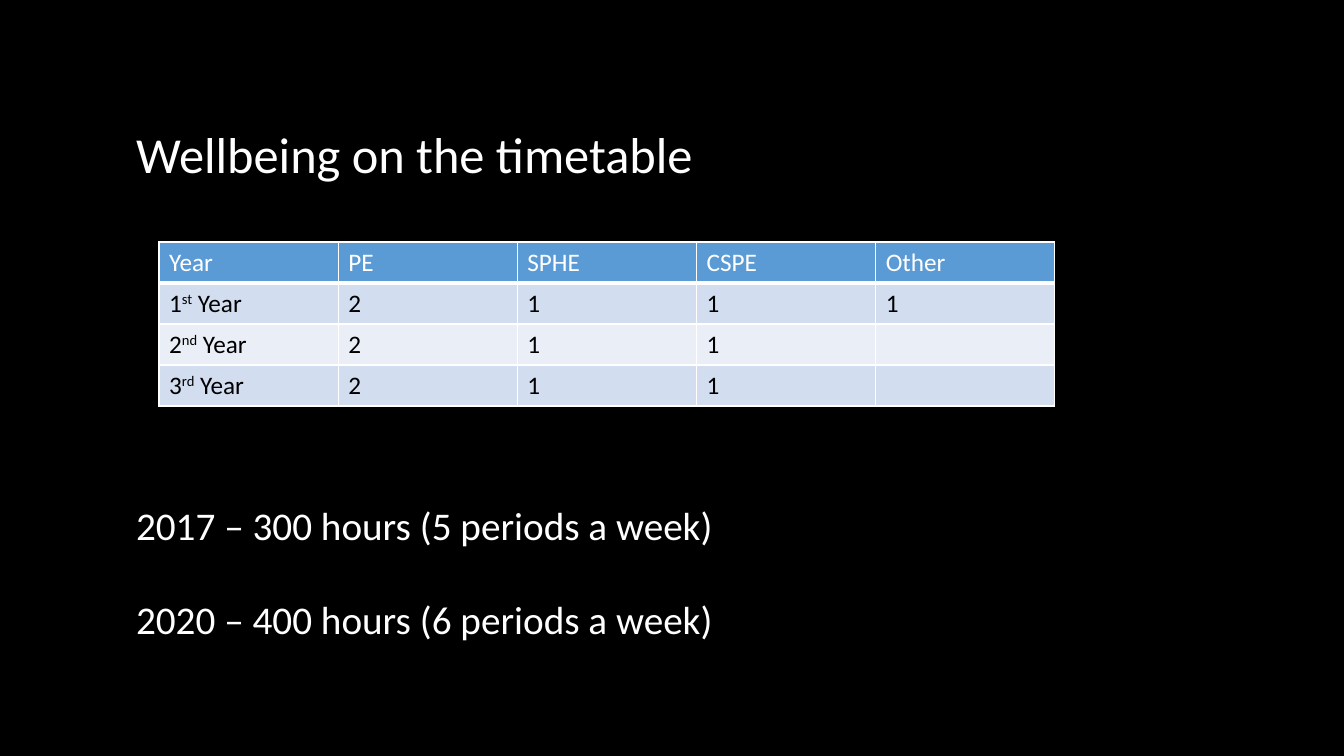
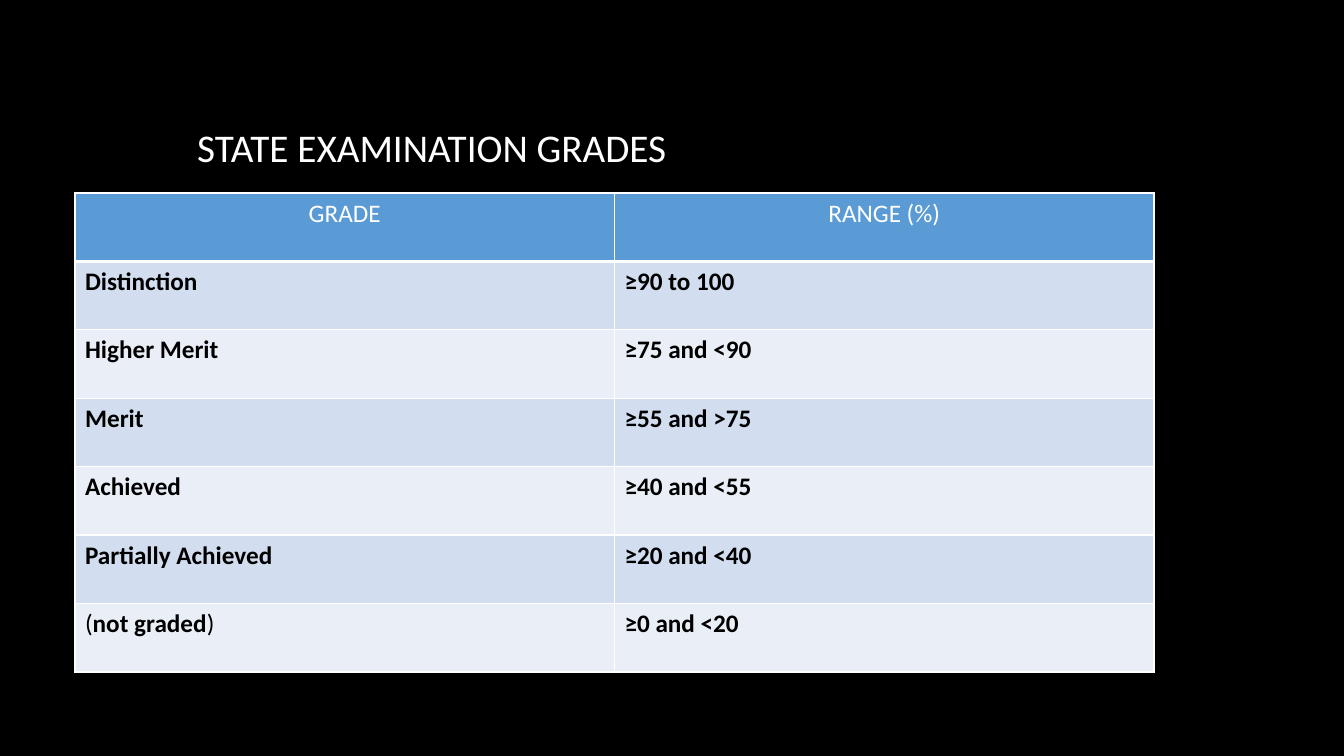
from dataclasses import dataclass

from pptx import Presentation
from pptx.dml.color import RGBColor
from pptx.enum.text import MSO_ANCHOR, MSO_AUTO_SIZE, PP_ALIGN
from pptx.oxml.ns import qn
from pptx.util import Emu, Pt
from lxml.etree import SubElement

EMU_PER_PX = 914400 / 100.8
TITLE_AND_BODY, TITLE_ONLY = 1, 5


@dataclass(frozen=True)
class Theme:
    """Colours, typeface and type sizes of the deck."""
    font: str = "Calibri"
    background: str = "000000"
    light: str = "FFFFFF"
    dark: str = "000000"
    header: str = "5B9BD5"
    bands: tuple = ("D2DEEF", "EAEFF7")
    title_size: int = 36
    text_size: int = 28
    table_size: int = 18
    paragraph_gap: int = 34
    rule: int = 1
    header_rule: int = 3


@dataclass(frozen=True)
class Span:
    """A piece of text with its own weight or raised position."""
    text: str
    bold: bool = False
    raised: bool = False


def px(length):
    """Turn pixels into EMU."""
    return Emu(round(length * EMU_PER_PX))


class Deck:
    """Holds the style and the current page, and draws each kind of element."""

    def __init__(self, theme):
        """Start an empty deck with the shared background."""
        self.theme = theme
        self.page = None
        self.presentation = Presentation()
        self.presentation.slide_width = px(1344)
        self.presentation.slide_height = px(756)
        self.fill(self.presentation.slide_master.background, theme.background)

    def fill(self, target, colour):
        """Give a background or a cell a solid colour."""
        target.fill.solid()
        target.fill.fore_color.rgb = RGBColor.from_string(colour)

    def add_page(self, layout):
        """Add a page and make it current."""
        layouts = self.presentation.slide_layouts
        self.page = self.presentation.slides.add_slide(layouts[layout])

    def add_spans(self, paragraph, spans, size, colour):
        """Add spans to a paragraph run by run."""
        for span in spans:
            run = paragraph.add_run()
            run.text = span.text
            run.font.name = self.theme.font
            run.font.size = Pt(size)
            run.font.bold = span.bold
            run.font.color.rgb = RGBColor.from_string(colour)
            if span.raised:
                run._r.get_or_add_rPr().set("baseline", "30000")

    def place(self, box, left, top, width, height):
        """Move a placeholder and return its text frame."""
        box.left, box.top = px(left), px(top)
        box.width, box.height = px(width), px(height)
        frame = box.text_frame
        frame.word_wrap = True
        frame.auto_size = MSO_AUTO_SIZE.NONE
        frame.vertical_anchor = MSO_ANCHOR.TOP
        return frame

    def title(self, text, bounds, size):
        """Fill the title placeholder."""
        paragraph = self.place(self.page.shapes.title, *bounds).paragraphs[0]
        paragraph.alignment = PP_ALIGN.LEFT
        self.add_spans(paragraph, [Span(text)], size, self.theme.light)

    def body(self, lines, bounds):
        """Fill the body placeholder with unbulleted, spaced lines."""
        frame = self.place(self.page.placeholders[1], *bounds)
        for index, line in enumerate(lines):
            paragraph = frame.add_paragraph() if index else frame.paragraphs[0]
            properties = paragraph._p.get_or_add_pPr()
            properties.set("marL", "0")
            properties.set("indent", "0")
            SubElement(properties, qn("a:buNone"))
            paragraph.space_before = Pt(self.theme.paragraph_gap if index else 0)
            self.add_spans(paragraph, [Span(line)], self.theme.text_size, self.theme.light)

    def borders(self, cell, bottom):
        """Draw the four rules of a cell."""
        properties = cell._tc.get_or_add_tcPr()
        rule = self.theme.rule
        for side, width in (("L", rule), ("R", rule), ("T", rule), ("B", bottom)):
            line = SubElement(properties, qn(f"a:ln{side}"), w=str(int(Pt(width))))
            solid = SubElement(line, qn("a:solidFill"))
            SubElement(solid, qn("a:srgbClr"), val=self.theme.light)

    def table(self, rows, bounds, header_alignment=PP_ALIGN.LEFT, bold=False):
        """Add a banded table with equal columns and rows."""
        theme = self.theme
        frame = self.page.shapes.add_table(len(rows), len(rows[0]), *map(px, bounds))
        for row_index, row in enumerate(rows):
            is_header = row_index == 0
            shade = theme.header if is_header else theme.bands[(row_index - 1) % 2]
            for column_index, content in enumerate(row):
                cell = frame.table.cell(row_index, column_index)
                self.borders(cell, theme.header_rule if is_header else theme.rule)
                self.fill(cell, shade)
                paragraph = cell.text_frame.paragraphs[0]
                paragraph.alignment = header_alignment if is_header else PP_ALIGN.LEFT
                paragraph.font.size = Pt(theme.table_size)
                if isinstance(content, str):
                    content = [Span(content, bold and not is_header)] if content else []
                colour = theme.light if is_header else theme.dark
                self.add_spans(paragraph, content, theme.table_size, colour)


def ordinal_year(number, suffix):
    """Return the spans of a school year with a raised suffix."""
    return [Span(number), Span(suffix, raised=True), Span(" Year")]


def timetable_page(deck):
    """Build the timetable page."""
    deck.add_page(TITLE_AND_BODY)
    deck.title("Wellbeing on the timetable", (126, 118, 1016, 72), deck.theme.title_size)
    deck.table([
        ["Year", "PE", "SPHE", "CSPE", "Other"],
        [ordinal_year("1", "st"), "2", "1", "1", "1"],
        [ordinal_year("2", "nd"), "2", "1", "1", ""],
        [ordinal_year("3", "rd"), "2", "1", "1", ""],
    ], (159, 242, 896, 164))
    deck.body([
        "2017 – 300 hours (5 periods a week)",
        "2020 – 400 hours (6 periods a week)",
    ], (126, 496, 849, 152))


def grades_page(deck):
    """Build the examination grades page."""
    deck.add_page(TITLE_ONLY)
    deck.title("STATE EXAMINATION GRADES", (187, 118, 552, 57), deck.theme.text_size)
    deck.table([
        ["GRADE", "RANGE (%)"],
        ["Distinction", "≥90 to 100"],
        ["Higher Merit", "≥75 and <90"],
        ["Merit", "≥55 and >75"],
        ["Achieved", "≥40 and <55"],
        ["Partially Achieved", "≥20 and <40"],
        [[Span("("), Span("not graded", bold=True), Span(")")], "≥0 and <20"],
    ], (75, 193, 1079, 479), PP_ALIGN.CENTER, bold=True)


def main():
    """Build and save the deck."""
    deck = Deck(Theme())
    timetable_page(deck)
    grades_page(deck)
    deck.presentation.save("out.pptx")


if __name__ == "__main__":
    main()
